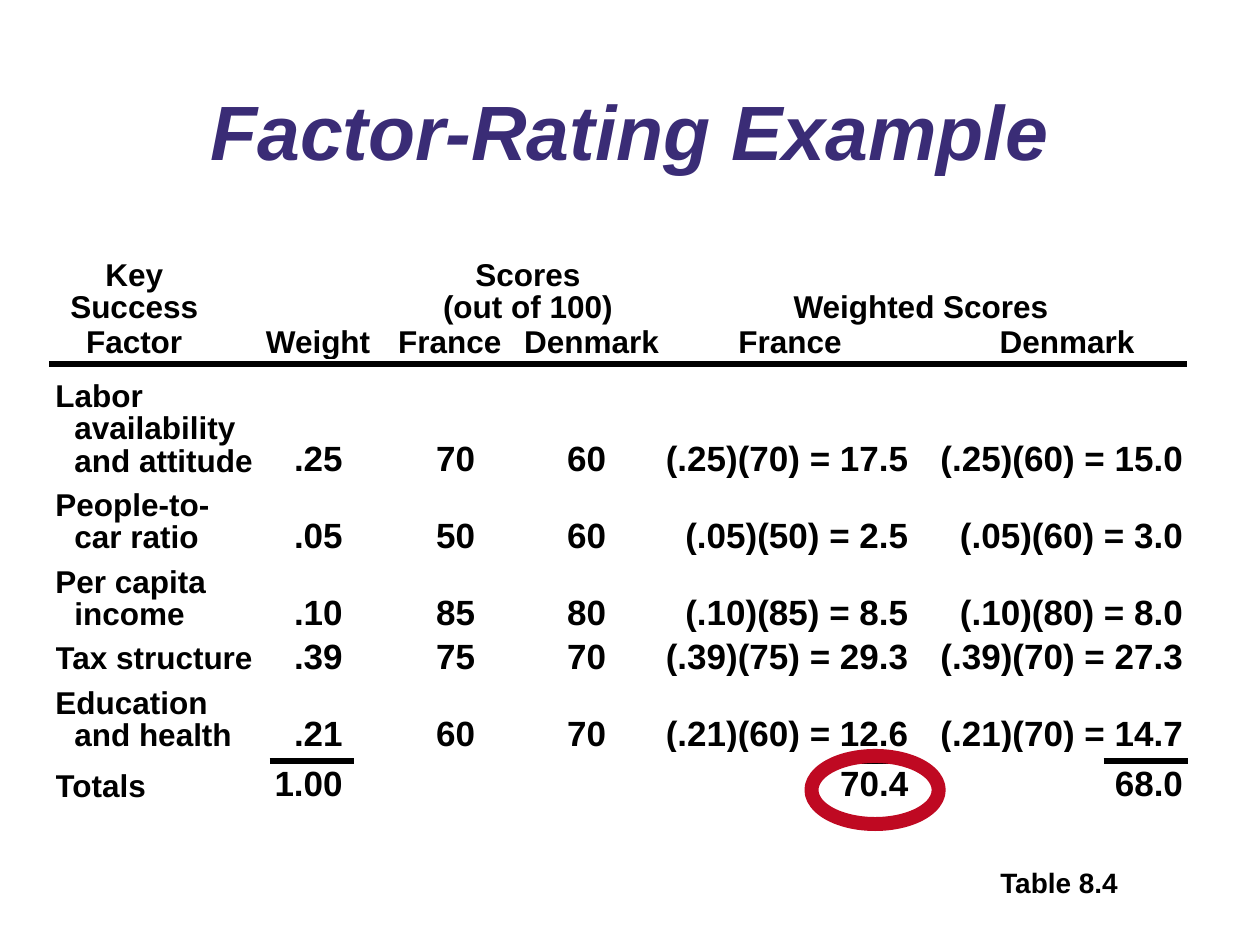
"""Build the factor-rating slide: a scored table with rules and a ringed total."""
from typing import NamedTuple

from lxml import etree
from pptx import Presentation
from pptx.dml.color import RGBColor
from pptx.enum.shapes import MSO_CONNECTOR, MSO_SHAPE
from pptx.enum.text import MSO_ANCHOR, PP_ALIGN
from pptx.oxml.ns import qn
from pptx.util import Inches, Pt

BLACK = RGBColor(0x00, 0x00, 0x00)
PURPLE = RGBColor(0x3A, 0x2C, 0x76)
RED = RGBColor(0xBF, 0x09, 0x22)
LEFT, CENTER, RIGHT = PP_ALIGN.LEFT, PP_ALIGN.CENTER, PP_ALIGN.RIGHT
MIDDLE, BOTTOM = MSO_ANCHOR.MIDDLE, MSO_ANCHOR.BOTTOM
OVAL, STRAIGHT = MSO_SHAPE.OVAL, MSO_CONNECTOR.STRAIGHT

GRID_X, GRID_Y = 0.44, 2.03
WIDTHS = (1.61, 0.95, 1.14, 1.11, 2.04, 2.36)
PADS = (0, 0.28, 0.37, 0.44, 0.08, 0.26)
HEAD_HIGHS = (0.52, 0.26)


class Head(NamedTuple):
    """A heading over one or more columns."""
    text: str
    row: int
    col: int
    span: int = 1
    lead: float = 0
    trail: float = 0


class Factor(NamedTuple):
    """One row of the body."""
    label: str
    high: float
    cells: tuple[str, ...]


class Rule(NamedTuple):
    """A level line."""
    start: float
    end: float
    y: float


HEADS = (
    Head("Key\nSuccess", 0, 0, trail=0.36),
    Head("Scores\n(out of 100)", 0, 2, 2, lead=0.13),
    Head("Weighted Scores", 0, 4, 2, trail=0.28),
    Head("Factor", 1, 0, trail=0.36),
    Head("Weight", 1, 1),
) + tuple(Head(name, 1, col) for col, name in
          enumerate(("France", "Denmark") * 2, 2))
FACTORS = (
    Factor("Labor\navailability\nand attitude", 0.94,
           (".25", "70", "60", "(.25)(70) = 17.5", "(.25)(60) = 15.0")),
    Factor("People-to-\ncar ratio", 0.61,
           (".05", "50", "60", "(.05)(50) = 2.5", "(.05)(60) = 3.0")),
    Factor("Per capita\nincome", 0.61,
           (".10", "85", "80", "(.10)(85) = 8.5", "(.10)(80) = 8.0")),
    Factor("Tax structure", 0.35,
           (".39", "75", "70", "(.39)(75) = 29.3", "(.39)(70) = 27.3")),
    Factor("Education\nand health", 0.61,
           (".21", "60", "70", "(.21)(60) = 12.6", "(.21)(70) = 14.7")),
    Factor("Totals", 0.4, ("1.00", "", "", "70.4", "68.0")),
)
RULES = (Rule(0.39, 9.42, 2.89),) + tuple(
    Rule(x, x + 0.67, 6.04) for x in (2.14, 6.6, 8.76))


def write(frame, text: str, *, size: float = 18, color: RGBColor = BLACK,
          align=LEFT, space: float = 0.92, indent: float = 0,
          italic: bool = False) -> None:
    """Fill a text frame with one paragraph per line."""
    for i, line in enumerate(text.split("\n")):
        para = frame.paragraphs[0] if i == 0 else frame.add_paragraph()
        para.alignment, para.line_spacing = align, space
        if i and indent:
            para._p.get_or_add_pPr().set("marL", str(Inches(indent)))
        run = para.add_run()
        run.text = line
        font = run.font
        font.name, font.size = "Arial", Pt(size)
        font.bold, font.italic = True, italic
        font.color.rgb = color


def add_text(slide, box: tuple[float, ...], text: str, wrap: bool,
             **form) -> None:
    """Add a text box centred on its height."""
    frame = slide.shapes.add_textbox(*map(Inches, box)).text_frame
    frame.word_wrap, frame.vertical_anchor = wrap, MIDDLE
    write(frame, text, **form)


def set_pads(cell, lead: float, trail: float) -> None:
    """Set the side margins of a cell."""
    cell.margin_left, cell.margin_right = Inches(lead), Inches(trail)


def add_grid(slide) -> None:
    """Add the table of factors and scores."""
    highs = HEAD_HIGHS + tuple(f.high for f in FACTORS)
    table = slide.shapes.add_table(
        len(highs), len(WIDTHS), Inches(GRID_X), Inches(GRID_Y),
        Inches(sum(WIDTHS)), Inches(sum(highs))).table
    table.first_row = table.horz_banding = False
    for col, width in zip(table.columns, WIDTHS):
        col.width = Inches(width)
    for row, high in zip(table.rows, highs):
        row.height = Inches(high)
    for cell in table.iter_cells():
        cell.fill.background()
        cell.margin_top = cell.margin_bottom = 0
        set_pads(cell, 0, 0)
        cell.vertical_anchor = BOTTOM
    for head in HEADS:
        cell = table.cell(head.row, head.col)
        if head.span > 1:
            cell.merge(table.cell(head.row, head.col + head.span - 1))
        set_pads(cell, head.lead, head.trail)
        write(cell.text_frame, head.text, align=CENTER)
    for r, factor in enumerate(FACTORS, len(HEAD_HIGHS)):
        write(table.cell(r, 0).text_frame, factor.label, indent=0.15)
        for c, text in enumerate(factor.cells, 1):
            if text:
                cell = table.cell(r, c)
                set_pads(cell, 0, PADS[c])
                write(cell.text_frame, text, size=20, align=RIGHT)


def add_rule(slide, rule: Rule) -> None:
    """Add a black level line."""
    line = slide.shapes.add_connector(
        STRAIGHT, *map(Inches, (rule.start, rule.y, rule.end, rule.y)))
    line.line.color.rgb, line.line.width = BLACK, Pt(3)
    etree.SubElement(line._element.spPr, qn("a:effectLst"))


def add_ring(slide, box: tuple[float, ...]) -> None:
    """Add the red ring around the best total."""
    ring = slide.shapes.add_shape(OVAL, *map(Inches, box))
    ring.shadow.inherit = False
    ring.fill.background()
    ring.line.color.rgb, ring.line.width = RED, Pt(8)


def main() -> None:
    """Build and save the slide."""
    deck = Presentation()
    deck.slide_width, deck.slide_height = Inches(10), Inches(7.5)
    slide = deck.slides.add_slide(deck.slide_layouts[6])
    add_text(slide, (0.75, 0.58, 8.5, 1), "Factor-Rating Example", True,
             size=44, color=PURPLE, align=CENTER, space=0.9, italic=True)
    add_grid(slide)
    for rule in RULES:
        add_rule(slide, rule)
    add_text(slide, (7.84, 6.82, 1.15, 0.37), "Table 8.4", False,
             size=16, space=1)
    add_ring(slide, (6.44, 6, 1.01, 0.54))
    deck.save("out.pptx")


if __name__ == "__main__":
    main()
